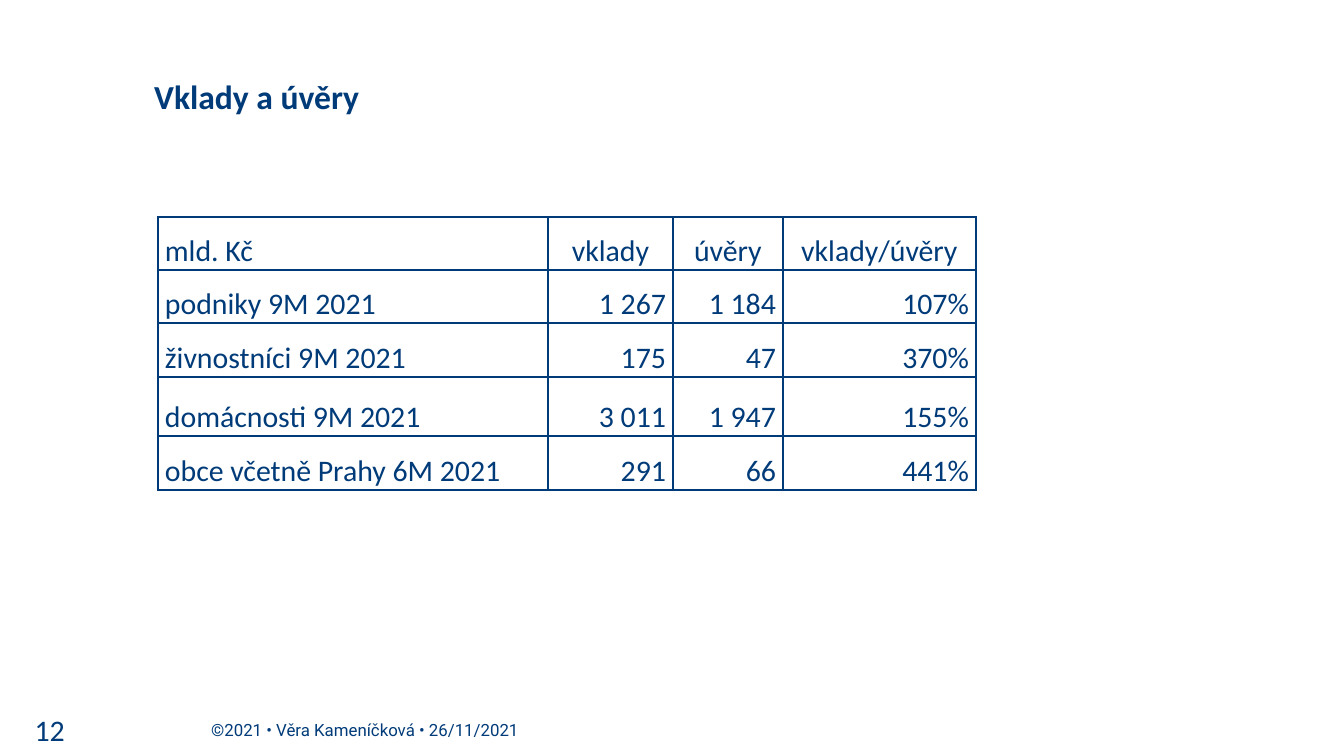
"""Builds the slide on deposits and loans."""
from lxml import etree
from pptx import Presentation
from pptx.dml.color import RGBColor
from pptx.enum.text import MSO_ANCHOR, PP_ALIGN
from pptx.oxml.ns import qn
from pptx.util import Emu, Pt

LEFT, CENTER, RIGHT = PP_ALIGN.LEFT, PP_ALIGN.CENTER, PP_ALIGN.RIGHT
TOP, MIDDLE, BOTTOM = MSO_ANCHOR.TOP, MSO_ANCHOR.MIDDLE, MSO_ANCHOR.BOTTOM
COLORS = {"main": "003B79", "footer": "013B79"}
EMU_PER_PX = 914400 / 134.4


def px(length):
    """Turn px into EMU."""
    return Emu(round(length * EMU_PER_PX))


class SlideBuilder:
    """Holds the style and the current slide."""

    font = "Calibri"
    line_spacing = 1.07
    border_width = Pt(1)

    def __init__(self, slide):
        self.slide = slide

    def style(self, paragraph, size, color="main", font=None, bold=False, align=LEFT):
        """Format a paragraph and its runs."""
        paragraph.alignment = align
        for run in paragraph.runs:
            run.font.name = font or self.font
            run.font.size = Pt(size)
            run.font.bold = bold
            run.font.color.rgb = RGBColor.from_string(COLORS[color])

    def text(self, content, left, top, width, height, size, anchor=MIDDLE, **look):
        """Add a text box and return its paragraph."""
        frame = self.slide.shapes.add_textbox(px(left), px(top), px(width), px(height)).text_frame
        frame.word_wrap = True
        frame.vertical_anchor = anchor
        frame.text = content
        self.style(frame.paragraphs[0], size, **look)
        return frame.paragraphs[0]

    def title(self, content, left, top, width, height):
        """Add the slide title."""
        paragraph = self.text(content, left, top, width, height, 18, anchor=TOP, bold=True)
        paragraph.line_spacing = self.line_spacing
        paragraph.space_after = Pt(8)

    def border(self, cell):
        """Draw all four borders of a cell."""
        properties = cell._tc.get_or_add_tcPr()
        for position, side in enumerate(("lnL", "lnR", "lnT", "lnB")):
            line = etree.Element(qn(f"a:{side}"), w=str(self.border_width))
            fill = etree.SubElement(line, qn("a:solidFill"))
            etree.SubElement(fill, qn("a:srgbClr"), val=COLORS["main"])
            properties.insert(position, line)

    def cell(self, cell, content, align):
        """Fill and format one table cell."""
        cell.text = content
        cell.fill.background()
        cell.vertical_anchor = BOTTOM
        cell.margin_left = cell.margin_right = px(7)
        cell.margin_top = cell.margin_bottom = 0
        paragraph = cell.text_frame.paragraphs[0]
        paragraph.line_spacing = self.line_spacing
        self.style(paragraph, 16, align=align)
        self.border(cell)

    def table(self, rows, left, top, widths, heights):
        """Add a table with centred headings and right-aligned figures."""
        table = self.slide.shapes.add_table(
            len(rows), len(widths), px(left), px(top), px(sum(widths)), px(sum(heights))
        ).table
        table.first_row = table.horz_banding = False
        for column, width in zip(table.columns, widths):
            column.width = px(width)
        for table_row, height in zip(table.rows, heights):
            table_row.height = px(height)
        for r, row in enumerate(rows):
            for c, content in enumerate(row):
                align = LEFT if c == 0 else CENTER if r == 0 else RIGHT
                self.cell(table.cell(r, c), content, align)


def main():
    """Build and save the slide."""
    deck = Presentation()
    deck.slide_width, deck.slide_height = px(1344), px(756)
    builder = SlideBuilder(deck.slides.add_slide(deck.slide_layouts[6]))

    builder.text("©2021 • Věra Kameníčková • 26/11/2021", 198, 710, 454, 40, 9,
                 color="footer", font="Roboto")
    builder.text("12", -9, 710, 87, 40, 16, color="footer", align=RIGHT)
    builder.title("Vklady a úvěry", 141, 67, 1048, 58)

    deposits_and_loans = [
        ("mld. Kč", "vklady", "úvěry", "vklady/úvěry"),
        ("podniky 9M 2021", "1 267", "1 184", "107%"),
        ("živnostníci 9M 2021", "175", "47", "370%"),
        ("domácnosti 9M 2021", "3 011", "1 947", "155%"),
        ("obce včetně Prahy 6M 2021", "291", "66", "441%"),
    ]
    builder.table(deposits_and_loans, 158, 217, (390, 125, 110, 193), (53, 53, 54, 59, 54))
    deck.save("out.pptx")


if __name__ == "__main__":
    main()
